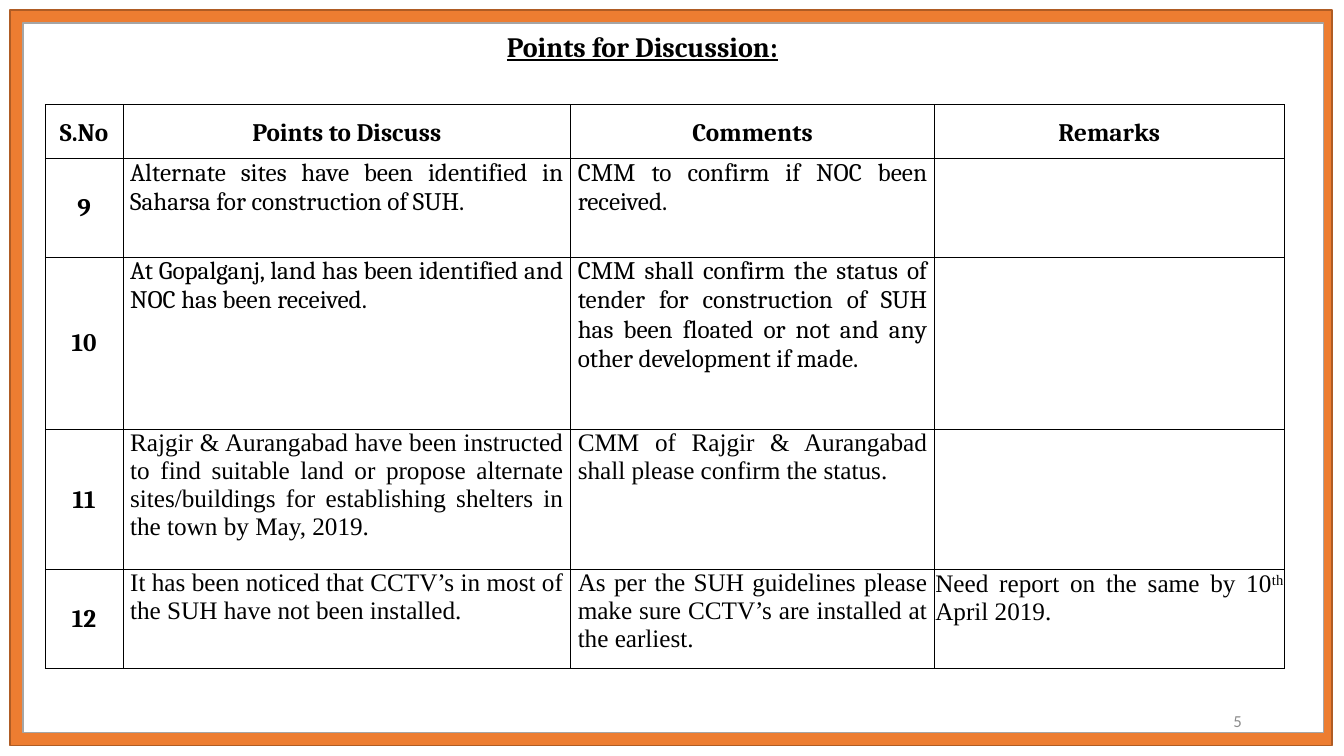
from dataclasses import dataclass

from lxml import etree
from pptx import Presentation
from pptx.dml.color import RGBColor
from pptx.enum.shapes import MSO_SHAPE
from pptx.enum.text import MSO_ANCHOR, MSO_AUTO_SIZE, PP_ALIGN
from pptx.oxml.ns import qn
from pptx.util import Cm, Pt

RECTANGLE = MSO_SHAPE.RECTANGLE
TOP, MIDDLE = MSO_ANCHOR.TOP, MSO_ANCHOR.MIDDLE
CENTER, RIGHT, JUSTIFY = PP_ALIGN.CENTER, PP_ALIGN.RIGHT, PP_ALIGN.JUSTIFY
NO_AUTOFIT = MSO_AUTO_SIZE.NONE
TITLE_ONLY_LAYOUT = 5


@dataclass(frozen=True)
class Theme:
    orange: str = "ED7D31"
    orange_edge: str = "AF5C24"
    white: str = "FFFFFF"
    gray_edge: str = "A5A5A5"
    black: str = "000000"
    number_gray: str = "8C8C8C"
    heading_font: str = "Cambria"
    body_font: str = "Times New Roman"
    number_font: str = "Calibri"
    title_size: int = 20
    table_size: int = 18
    number_size: int = 12
    border_width: float = 0.5


@dataclass(frozen=True)
class Frame:
    left: float
    top: float
    width: float
    height: float
    fill: str
    edge: str


@dataclass(frozen=True)
class Point:
    number: str
    topic: str
    comment: str
    font: str
    height: float
    remark: tuple[str, ...] = ()  # every second piece is superscript


THEME = Theme()

FRAMES = [
    Frame(0.25, 0.25, 33.32, 18.54, THEME.orange, THEME.orange_edge),
    Frame(0.58, 0.58, 32.77, 17.88, THEME.white, THEME.gray_edge),
]

HEADINGS = ["S.No", "Points to Discuss", "Comments", "Remarks"]
COLUMN_WIDTHS = [1.96, 11.28, 9.17, 8.81]
HEADING_HEIGHT = 1.35

POINTS = [
    Point("9", "Alternate sites have been identified in Saharsa for construction of SUH.",
          "CMM to confirm if NOC been received.", THEME.heading_font, 2.49),
    Point("10", "At Gopalganj, land has been identified and NOC has been received.",
          "CMM shall confirm the status of tender for construction of SUH has been "
          "floated or not and any other development if made.", THEME.heading_font, 4.34),
    Point("11", "Rajgir & Aurangabad have been instructed to find suitable land or propose "
          "alternate sites/buildings for establishing shelters in the town by May, 2019.",
          "CMM of Rajgir & Aurangabad shall please confirm the status.",
          THEME.body_font, 3.53),
    Point("12", "It has been noticed that CCTV’s in most of the SUH have not been installed.",
          "As per the SUH guidelines please make sure CCTV’s are installed at the earliest.",
          THEME.body_font, 2.49, ("Need report on the same by 10", "th", " April 2019.")),
]


def write(text_frame, *pieces: str, font: str = THEME.heading_font,
          size: int = THEME.table_size, color: str = THEME.black, bold: bool = False,
          underline: bool = False, align=CENTER, spacing: float = 1.0) -> None:
    """Write one paragraph; every second piece is superscript."""
    para = text_frame.paragraphs[0]
    para.alignment = align
    para.line_spacing = spacing
    for index, piece in enumerate(pieces):
        span = para.add_run()
        span.text = piece
        span.font.name = font
        span.font.size = Pt(size)
        span.font.bold = bold
        span.font.underline = underline
        span.font.color.rgb = RGBColor.from_string(color)
        if index % 2:
            span.font._element.set("baseline", "30000")


def draw_frame(page, frame: Frame) -> None:
    box = page.shapes.add_shape(RECTANGLE, Cm(frame.left), Cm(frame.top),
                                Cm(frame.width), Cm(frame.height))
    box.shadow.inherit = False
    box.fill.solid()
    box.fill.fore_color.rgb = RGBColor.from_string(frame.fill)
    box.line.color.rgb = RGBColor.from_string(frame.edge)
    box.line.width = Pt(1)


def format_cell(cell, anchor, side: float, top: float = 0) -> None:
    cell.vertical_anchor = anchor
    cell.margin_left = cell.margin_right = Cm(side)
    cell.margin_top, cell.margin_bottom = Cm(top), Cm(0)
    cell.fill.background()
    properties = cell._tc.get_or_add_tcPr()
    for index, edge in enumerate(("a:lnL", "a:lnR", "a:lnT", "a:lnB")):
        line = etree.Element(qn(edge), w=str(Pt(THEME.border_width)))
        fill = etree.SubElement(line, qn("a:solidFill"))
        etree.SubElement(fill, qn("a:srgbClr"), val=THEME.black)
        properties.insert(index, line)


def draw_table(page) -> None:
    heights = [HEADING_HEIGHT] + [point.height for point in POINTS]
    table = page.shapes.add_table(len(heights), len(HEADINGS), Cm(1.14), Cm(2.64),
                                  Cm(sum(COLUMN_WIDTHS)), Cm(sum(heights))).table
    table.first_row = table.horz_banding = False
    for column, width in zip(table.columns, COLUMN_WIDTHS):
        column.width = Cm(width)
    for row, height in zip(table.rows, heights):
        row.height = Cm(height)

    # Heading row
    for column, heading in enumerate(HEADINGS):
        cell = table.cell(0, column)
        format_cell(cell, MIDDLE, 0.15)
        write(cell.text_frame, heading, bold=True, spacing=1.15)

    # Discussion points
    for row, point in enumerate(POINTS, start=1):
        number, topic, comment, remark = table.rows[row].cells
        format_cell(number, MIDDLE, 0.02, top=0.02)
        write(number.text_frame, point.number, bold=True)
        for cell, text in ((topic, point.topic), (comment, point.comment)):
            format_cell(cell, TOP, 0.18)
            write(cell.text_frame, text, font=point.font, align=JUSTIFY)
        format_cell(remark, TOP, 0.02, top=0.02)
        write(remark.text_frame, *point.remark, font=point.font, align=JUSTIFY)


def main() -> None:
    deck = Presentation()
    deck.slide_width, deck.slide_height = Cm(33.87), Cm(19.05)
    page = deck.slides.add_slide(deck.slide_layouts[TITLE_ONLY_LAYOUT])

    # Border frames, kept behind the title
    title = page.shapes.title
    for frame in FRAMES:
        draw_frame(page, frame)
    page.shapes._spTree.append(title._element)

    # Title
    title.left, title.top, title.width, title.height = Cm(1.24), Cm(0.91), Cm(29.9), Cm(0.61)
    title.text_frame.auto_size = NO_AUTOFIT
    title.text_frame.vertical_anchor = MIDDLE
    write(title.text_frame, "Points for Discussion:", size=THEME.title_size,
          bold=True, underline=True, spacing=0.9)

    draw_table(page)

    # Page number
    box = page.shapes.add_textbox(Cm(23.93), Cm(17.65), Cm(7.62), Cm(1.02))
    box.text_frame.word_wrap = True
    box.text_frame.vertical_anchor = MIDDLE
    write(box.text_frame, "5", font=THEME.number_font, size=THEME.number_size,
          color=THEME.number_gray, align=RIGHT)

    deck.save("out.pptx")


if __name__ == "__main__":
    main()
